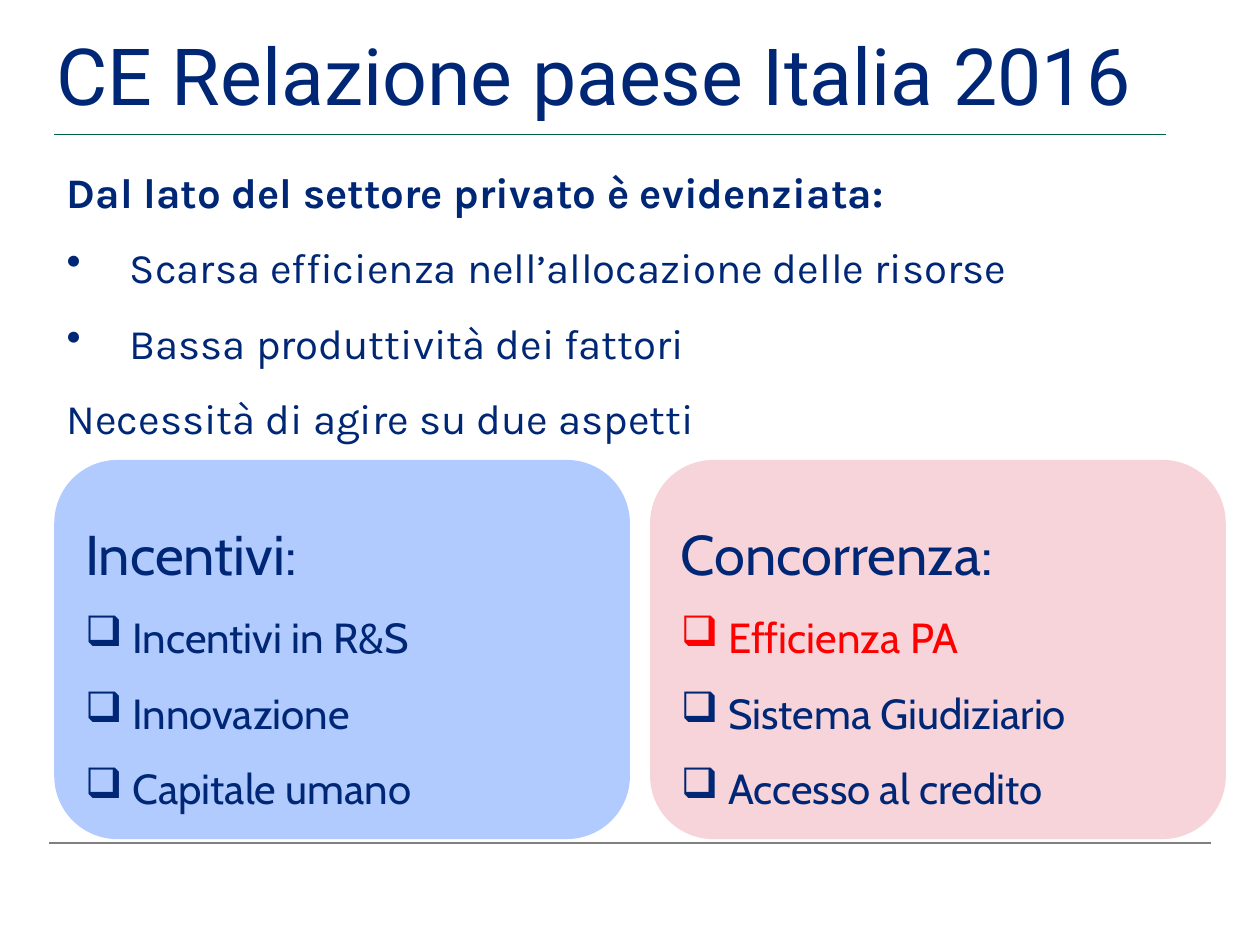
from lxml import etree
from pptx import Presentation
from pptx.dml.color import RGBColor
from pptx.enum import shapes, text
from pptx.oxml import ns
from pptx.util import Pt

NAVY = RGBColor(0x00, 0x27, 0x76)
RED = RGBColor(0xFF, 0x00, 0x00)
GREEN = RGBColor(0x00, 0x64, 0x42)
GREY = RGBColor(0x80, 0x80, 0x80)
LIGHT_BLUE = RGBColor(0xB1, 0xCB, 0xFF)
LIGHT_PINK = RGBColor(0xF6, 0xD4, 0xDA)

LEFT = 31
CARD_TOP, CARD_WIDTH, CARD_HEIGHT, CARD_STEP = 262.8, 329, 216.7, 340.5


def add_rule(slide, left, right, top, color):
    rule = slide.shapes.add_connector(
        shapes.MSO_CONNECTOR.STRAIGHT, Pt(left), Pt(top), Pt(right), Pt(top))
    rule.line.color.rgb = color
    rule.line.width = Pt(0.75)
    etree.SubElement(rule._element.spPr, ns.qn("a:effectLst"))


def add_text_box(slide, left, top, width, height):
    box = slide.shapes.add_textbox(Pt(left), Pt(top), Pt(width), Pt(height))
    box.text_frame.word_wrap = True
    return box.text_frame


def set_bullet(paragraph, character, indent):
    properties = paragraph._p.get_or_add_pPr()
    properties.set("marL", str(Pt(indent)))
    properties.set("indent", str(-Pt(indent)))
    bullet = etree.SubElement(properties, ns.qn("a:buChar"))
    bullet.set("char", character)


def write_paragraph(frame, words, font_name, size, color=NAVY, bold=False,
                    spacing=1.5, bullet=None, indent=0):
    paragraph = frame.paragraphs[0] if not frame.text else frame.add_paragraph()
    paragraph.text = words
    paragraph.alignment = text.PP_ALIGN.LEFT
    paragraph.line_spacing = spacing
    if bullet:
        set_bullet(paragraph, bullet, indent)
    font = paragraph.font
    font.name, font.size, font.bold = font_name, Pt(size), bold
    font.color.rgb = color


def add_card(slide, column, fill, heading, items):
    card = slide.shapes.add_shape(
        shapes.MSO_SHAPE.ROUNDED_RECTANGLE, Pt(LEFT + column * CARD_STEP),
        Pt(CARD_TOP), Pt(CARD_WIDTH), Pt(CARD_HEIGHT))
    card.shadow.inherit = False
    card.fill.solid()
    card.fill.fore_color.rgb = fill
    card.line.fill.background()
    frame = card.text_frame
    frame.word_wrap = True
    frame.vertical_anchor = text.MSO_ANCHOR.MIDDLE
    write_paragraph(frame, heading, "Cabin", 32)
    for words, color in items:
        write_paragraph(frame, words, "Cabin", 24, color, bullet="❑", indent=27)


def main():
    presentation = Presentation()
    presentation.slide_width, presentation.slide_height = Pt(720), Pt(540)
    slide = presentation.slides.add_slide(presentation.slide_layouts[6])

    # Footer and title rules
    add_rule(slide, 28, 692, 481.7, GREY)
    add_rule(slide, LEFT, 666, 77, GREEN)

    # Title
    title = add_text_box(slide, 25.2, 11.5, 680, 62)
    write_paragraph(title, "CE Relazione paese Italia 2016", "Roboto", 45, spacing=1)

    # Findings
    findings = add_text_box(slide, LEFT, 77, 641, 181.5)
    write_paragraph(findings, "Dal lato del settore privato è evidenziata:",
                    "Karla", 24, bold=True)
    for words in ("Scarsa efficienza nell’allocazione delle risorse",
                  "Bassa produttività dei fattori"):
        write_paragraph(findings, words, "Karla", 24, bullet="•", indent=36)
    write_paragraph(findings, "Necessità di agire su due aspetti", "Karla", 24)

    # Two areas of action
    add_card(slide, 0, LIGHT_BLUE, "Incentivi:",
             [("Incentivi in R&S", NAVY), ("Innovazione", NAVY),
              ("Capitale umano", NAVY)])
    add_card(slide, 1, LIGHT_PINK, "Concorrenza:",
             [("Efficienza PA", RED), ("Sistema Giudiziario", NAVY),
              ("Accesso al credito", NAVY)])

    presentation.save("out.pptx")


if __name__ == "__main__":
    main()
